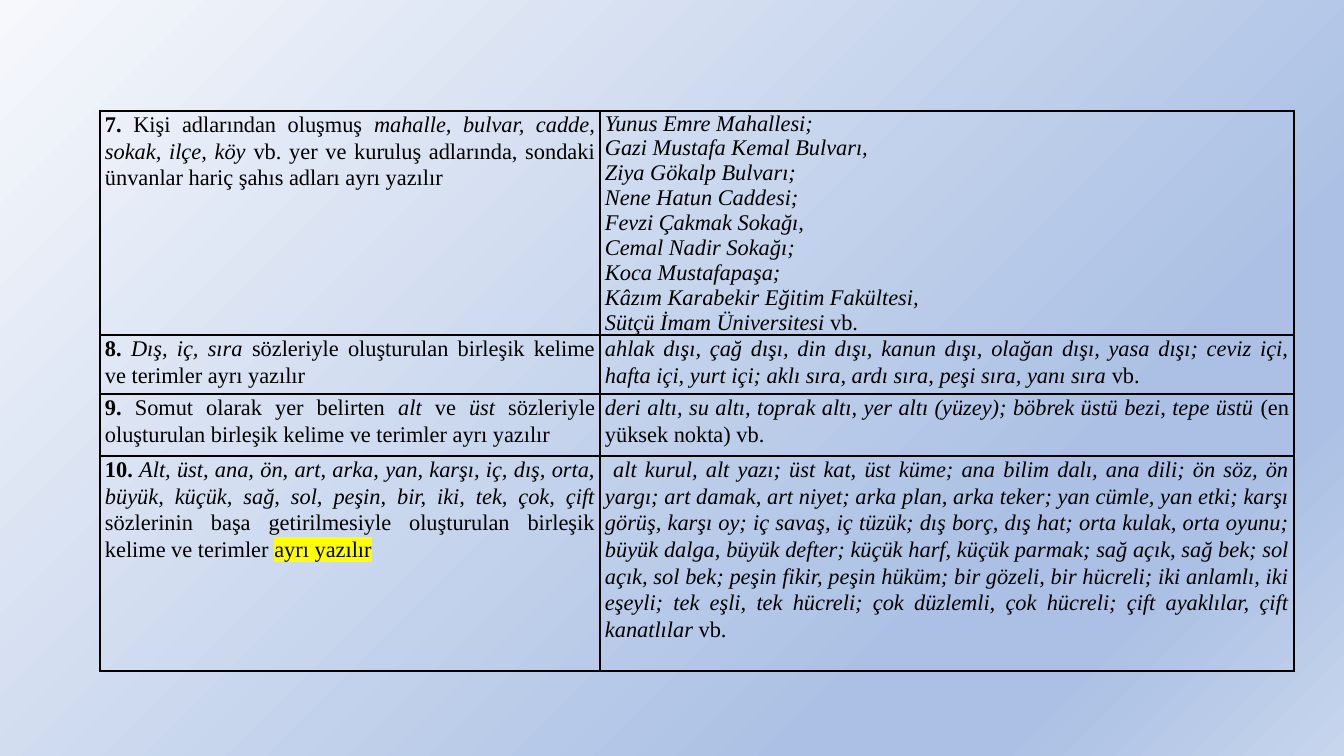
"""Build a slide with a table of Turkish rules for words written separately."""
import pptx
import pptx.util
import pptx.dml.color
import pptx.enum.text
import pptx.oxml
import pptx.oxml.ns
import lxml.etree

PX = 9525 * 96 / 100.8
COLOURS = {"ink": "000000", "marker": "FFFF00", "pale": "F6F8FC",
           "blue": "ABC0E4", "mist": "C7D5ED"}
GRADIENT = [(0, "pale"), (74, "blue"), (83, "blue"), (100, "mist")]
FORMATS = {
    "plain": {"bold": False, "italic": False},
    "bold": {"bold": True, "italic": False},
    "italic": {"bold": False, "italic": True},
    "marked": {"bold": False, "italic": False},
}
RULE_SPACING = {"line_spacing": 1.07, "space_after": pptx.util.Pt(8)}
LIST_SPACING = {"line_spacing": 1.0, "space_after": pptx.util.Pt(0)}
MARGINS = {"margin_left": 5, "margin_right": 5, "margin_top": 0, "margin_bottom": 0}
COLUMN_WIDTHS = [500, 694]
ROW_HEIGHTS = [224, 59, 62, 215]

PLACES = [
    "Yunus Emre Mahallesi;", "Gazi Mustafa Kemal Bulvarı,", "Ziya Gökalp Bulvarı;",
    "Nene Hatun Caddesi;", "Fevzi Çakmak Sokağı,", "Cemal Nadir Sokağı;",
    "Koca Mustafapaşa;", "Kâzım Karabekir Eğitim Fakültesi,",
]
RULES = [
    ([[("bold", "7. "), ("plain", "Kişi adlarından oluşmuş "),
       ("italic", "mahalle, bulvar, cadde, sokak, ilçe, köy "),
       ("plain", "vb. yer ve kuruluş adlarında, sondaki ünvanlar hariç "
                 "şahıs adları ayrı yazılır")]],
     [[("italic", place)] for place in PLACES]
     + [[("italic", "Sütçü İmam Üniversitesi"), ("plain", " vb.")]]),
    ([[("bold", "8. "), ("italic", "Dış, iç, sıra "),
       ("plain", "sözleriyle oluşturulan birleşik kelime ve terimler ayrı yazılır")]],
     [[("italic", "ahlak dışı, çağ dışı, din dışı, kanun dışı, olağan dışı, yasa dışı; "
                  "ceviz içi, hafta içi, yurt içi; aklı sıra, ardı sıra, peşi sıra, "
                  "yanı sıra"), ("plain", " vb.")]]),
    ([[("bold", "9. "), ("plain", "Somut olarak yer belirten "), ("italic", "alt "),
       ("plain", "ve "), ("italic", "üst"),
       ("plain", " sözleriyle oluşturulan birleşik kelime ve terimler ayrı yazılır")]],
     [[("italic", "deri altı, su altı, toprak altı, yer altı (yüzey); "
                  "böbrek üstü bezi, tepe üstü "),
       ("plain", "(en yüksek nokta) vb.")]]),
    ([[("bold", "10. "),
       ("italic", "Alt, üst, ana, ön, art, arka, yan, karşı, iç, dış, orta, büyük, "
                  "küçük, sağ, sol, peşin, bir, iki, tek, çok, çift"),
       ("plain", " sözlerinin başa getirilmesiyle oluşturulan birleşik kelime "
                 "ve terimler "), ("marked", "ayrı yazılır")]],
     [[("italic", " alt kurul, alt yazı; üst kat, üst küme; ana bilim dalı, ana dili; "
                  "ön söz, ön yargı; art damak, art niyet; arka plan, arka teker; "
                  "yan cümle, yan etki; karşı görüş, karşı oy; iç savaş, iç tüzük; "
                  "dış borç, dış hat; orta kulak, orta oyunu; büyük dalga, büyük defter; "
                  "küçük harf, küçük parmak; sağ açık, sağ bek; sol açık, sol bek; "
                  "peşin fikir, peşin hüküm; bir gözeli, bir hücreli; "
                  "iki anlamlı, iki eşeyli; tek eşli, tek hücreli; "
                  "çok düzlemli, çok hücreli; çift ayaklılar, çift kanatlılar"),
       ("plain", " vb.")]]),
]


def px(length):
    """Turn slide pixels into EMU."""
    return pptx.util.Emu(round(length * PX))


def add_colour(parent, tag, colour, **attributes):
    """Append an element that holds one RGB colour."""
    holder = lxml.etree.SubElement(parent, pptx.oxml.ns.qn(tag), **attributes)
    lxml.etree.SubElement(holder, pptx.oxml.ns.qn("a:srgbClr"), val=COLOURS[colour])
    return holder


deck = pptx.Presentation()
deck.slide_width, deck.slide_height = px(1344), px(756)
slide = deck.slides.add_slide(deck.slide_layouts[6])

backdrop = slide.background.fill
backdrop.gradient()
backdrop.gradient_angle = 315
stops = next(slide.element.iter(pptx.oxml.ns.qn("a:gsLst")))
for stop in list(stops):
    stops.remove(stop)
for percent, colour in GRADIENT:
    add_colour(stops, "a:gs", colour, pos=str(percent * 1000))

rules = slide.shapes.add_table(len(ROW_HEIGHTS), len(COLUMN_WIDTHS), px(100), px(111),
                               px(sum(COLUMN_WIDTHS)), px(sum(ROW_HEIGHTS))).table
rules.first_row = rules.horz_banding = False
for column, width in zip(rules.columns, COLUMN_WIDTHS):
    column.width = px(width)
for row, height in zip(rules.rows, ROW_HEIGHTS):
    row.height = px(height)

for row, contents in zip(rules.rows, RULES):
    for cell, paragraphs in zip(row.cells, contents):
        for name, value in MARGINS.items():
            setattr(cell, name, px(value))
        properties = cell._tc.get_or_add_tcPr()
        for side in ("L", "R", "T", "B"):
            border = lxml.etree.SubElement(properties, pptx.oxml.ns.qn("a:ln" + side),
                                           w=str(pptx.util.Pt(1)))
            lxml.etree.SubElement(add_colour(border, "a:solidFill", "ink").getparent(),
                                  pptx.oxml.ns.qn("a:prstDash"), val="solid")
        cell.fill.background()
        spacing = LIST_SPACING if len(paragraphs) > 1 else RULE_SPACING
        for index, pieces in enumerate(paragraphs):
            frame = cell.text_frame
            paragraph = frame.add_paragraph() if index else frame.paragraphs[0]
            paragraph.alignment = pptx.enum.text.PP_ALIGN.JUSTIFY
            for name, value in spacing.items():
                setattr(paragraph, name, value)
            for style, words in pieces:
                run = paragraph.add_run()
                run.text = words
                face = {"size": pptx.util.Pt(16), "name": "Times New Roman"}
                for name, value in (face | FORMATS[style]).items():
                    setattr(run.font, name, value)
                run.font.color.rgb = pptx.dml.color.RGBColor.from_string(COLOURS["ink"])
                if style == "marked":
                    letters = run._r.get_or_add_rPr()
                    latin = letters.find(pptx.oxml.ns.qn("a:latin"))
                    latin.addprevious(add_colour(letters, "a:highlight", "marker"))

deck.save("out.pptx")
